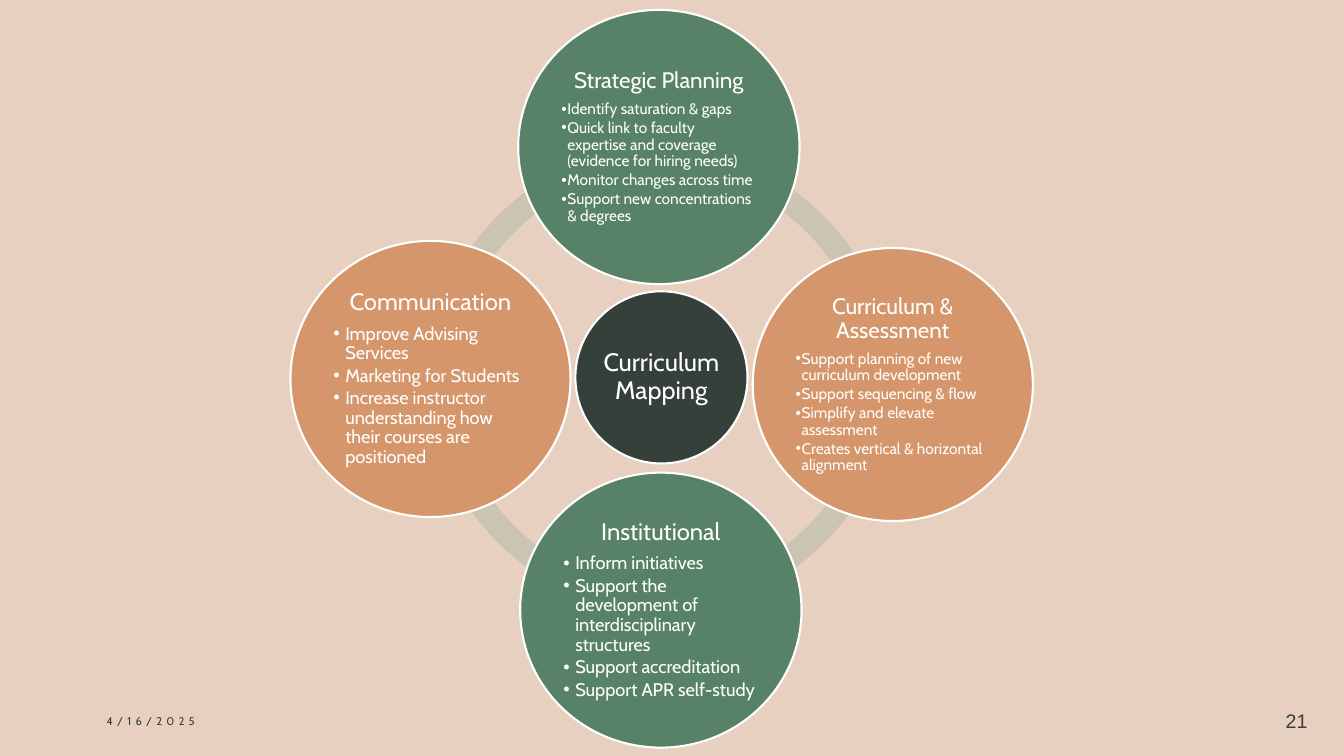
import pptx
import pptx.dml.color
import pptx.enum.shapes
import pptx.enum.text
import pptx.oxml.ns
import pptx.util
from lxml import etree

Cm = pptx.util.Cm
Pt = pptx.util.Pt
SHAPES = pptx.enum.shapes.MSO_SHAPE
ALIGN = pptx.enum.text.PP_ALIGN
MIDDLE = pptx.enum.text.MSO_ANCHOR.MIDDLE

COLORS = {
    "background": "EED5C4",
    "veil": "C0B7A5",
    "ring": "CCC4B3",
    "dark": "35403A",
    "green": "588267",
    "orange": "D5966B",
    "white": "FFFFFF",
}

RING_SIZE = 12.83
RING_ARCS = [
    (10.67, 3.56, 183.72, 265.45),
    (10.67, 2.72, 94.02, 176.09),
    (9.83, 2.72, 5.15, 86.27),
    (9.8, 3.56, 273.39, 357.42),
]

TOPICS = [
    ((13.06, 0.25, 7.09, 6.91), "green", "Strategic Planning", 16, 11, 0.15, [
        "Identify saturation & gaps",
        "Quick link to faculty expertise and coverage (evidence for hiring needs)",
        "Monitor changes across time",
        "Support new concentrations & degrees",
    ]),
    ((18.97, 6.25, 7.06, 6.88), "orange", "Curriculum & Assessment", 16, 11, 0.15, [
        "Support planning of new curriculum development",
        "Support sequencing & flow",
        "Simplify and elevate assessment",
        "Creates vertical & horizontal alignment",
    ]),
    ((13.11, 11.91, 7.09, 6.93), "green", "Institutional", 17, 13, 0.3, [
        "Inform initiatives",
        "Support the development of interdisciplinary structures",
        "Support accreditation",
        "Support APR self-study",
    ]),
    ((7.32, 6.07, 7.06, 6.96), "orange", "Communication", 17, 13, 0.3, [
        "Improve Advising Services",
        "Marketing for Students",
        "Increase instructor understanding how their courses are positioned",
    ]),
]


def rgb(name):
    return pptx.dml.color.RGBColor.from_string(COLORS[name])


def add_span(para, text, size, color, font="Cabin"):
    span = para.add_run()
    span.text = text
    span.font.size = Pt(size)
    span.font.name = font
    span.font.color.rgb = rgb(color)
    return span


def add_figure(page, kind, place, color):
    figure = page.shapes.add_shape(kind, *map(Cm, place))
    figure.shadow.inherit = False
    figure.fill.solid()
    figure.fill.fore_color.rgb = rgb(color)
    figure.line.fill.background()
    return figure


def add_veil(page):
    veil = add_figure(page, SHAPES.RECTANGLE, (0, 0, 33.87, 19.05), "veil")
    color = veil.fill._xPr.find(".//" + pptx.oxml.ns.qn("a:srgbClr"))
    etree.SubElement(color, pptx.oxml.ns.qn("a:alpha"), val="15000")


def add_ring_arc(page, left, top, start, end):
    place = (left, top, RING_SIZE, RING_SIZE)
    arc = add_figure(page, SHAPES.BLOCK_ARC, place, "ring")
    arc.adjustments[0] = start * 0.6
    arc.adjustments[1] = end * 0.6
    arc.adjustments[2] = 0.046


def add_circle(page, place, color, title, size, inset):
    circle = add_figure(page, SHAPES.OVAL, place, color)
    circle.line.color.rgb = rgb("white")
    circle.line.width = Pt(1.5)
    frame = circle.text_frame
    frame.word_wrap = True
    frame.vertical_anchor = MIDDLE
    frame.margin_left = frame.margin_right = Cm(inset)
    frame.margin_top = frame.margin_bottom = Cm(inset)
    para = frame.paragraphs[0]
    para.alignment = ALIGN.CENTER
    para.line_spacing = 0.9
    para.space_after = Pt(size * 0.35)
    add_span(para, title, size, "white")
    return frame


def add_bullet(frame, text, size, indent):
    para = frame.add_paragraph()
    para.alignment = ALIGN.LEFT
    para.level = 1
    para.line_spacing = 0.9
    para.space_after = Pt(size * 0.15)
    properties = para._p.get_or_add_pPr()
    properties.set("marL", str(Cm(indent)))
    properties.set("indent", str(-Cm(indent)))
    etree.SubElement(properties, pptx.oxml.ns.qn("a:buFont"), typeface="Arial")
    etree.SubElement(properties, pptx.oxml.ns.qn("a:buChar"), char="•")
    add_span(para, text, size, "white")


def add_topic(page, place, color, title, title_size, size, indent, points):
    frame = add_circle(page, place, color, title, title_size, 0.05)
    for point in points:
        add_bullet(frame, point, size, indent)


def add_footer(page, left, width, text, size, font, alignment):
    box = page.shapes.add_textbox(Cm(left), Cm(17.65), Cm(width), Cm(1.02))
    box.text_frame.word_wrap = True
    box.text_frame.vertical_anchor = MIDDLE
    para = box.text_frame.paragraphs[0]
    para.alignment = alignment
    return add_span(para, text, size, "dark", font)


def main():
    deck = pptx.Presentation()
    deck.slide_width = Cm(33.87)
    deck.slide_height = Cm(19.05)
    page = deck.slides.add_slide(deck.slide_layouts[6])
    page.background.fill.solid()
    page.background.fill.fore_color.rgb = rgb("background")

    add_veil(page)
    date = add_footer(page, 2.44, 7.62, "4/16/2025", 8, "Cabin", ALIGN.LEFT)
    date.font._element.set("spc", "300")
    add_footer(page, 31.75, 1.45, "21", 14, "Arial", ALIGN.RIGHT)

    for arc in RING_ARCS:
        add_ring_arc(page, *arc)
    add_circle(page, (14.5, 7.34, 4.34, 4.34), "dark", "Curriculum Mapping", 18, 0)
    for topic in TOPICS:
        add_topic(page, *topic)

    deck.save("out.pptx")


if __name__ == "__main__":
    main()
